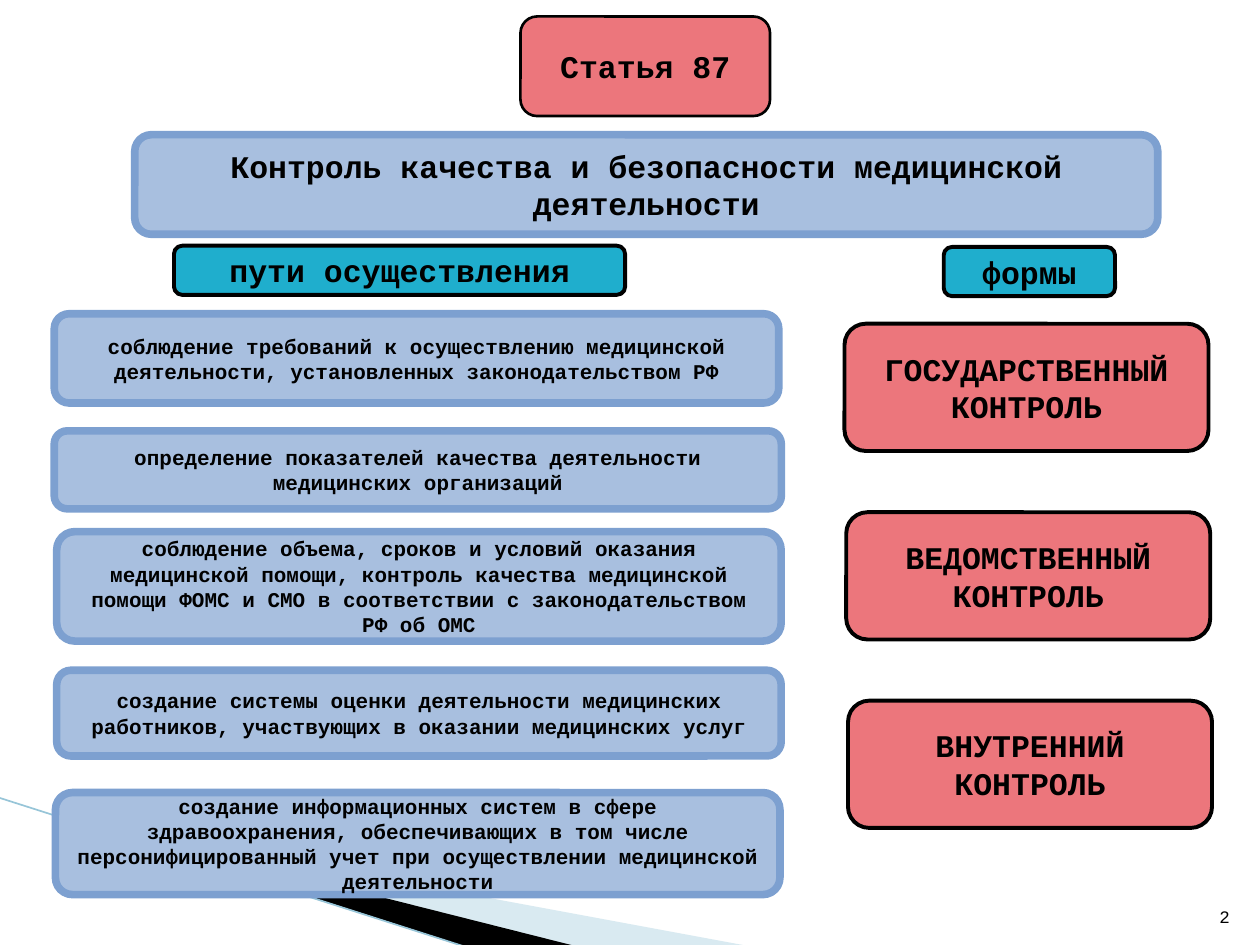
"""Build the slide on quality control in medical care."""
from dataclasses import dataclass
from lxml.etree import SubElement as Sub
from pptx import Presentation as Deck
from pptx.dml.color import RGBColor as Rgb
from pptx.enum.shapes import MSO_CONNECTOR as Link, MSO_SHAPE as Shape
from pptx.enum.text import MSO_ANCHOR as Anchor, PP_ALIGN as Align
from pptx.oxml.ns import qn
from pptx.util import Pt


@dataclass(frozen=True)
class Theme:
    face: str = "Courier New"
    ink: str = "000000"
    blue: str = "A8BFDF"
    edge: str = "7DA0D0"
    red: str = "EC767C"
    teal: str = "1FAECD"
    mist: str = "A0CBDC"
    ray: str = "97C5D8"
    head: int = 18
    body: int = 12
    note: int = 10


T = Theme()
CARD = {"fill": T.blue, "edge": T.edge, "line": 4.33}
FORM = {"fill": T.red, "edge": T.ink, "line": 2.25}
MARK = {"fill": T.teal, "edge": T.ink, "line": 2.25}
TITLE = {"fill": T.red, "edge": T.ink, "line": 1.5}

WAYS = [
    (31, 179.3, 414, 51, "соблюдение требований к осуществлению медицинской "
     "деятельности, установленных законодательством РФ"),
    (31, 246.2, 415.5, 44.6, "определение показателей качества деятельности "
     "медицинских организаций"),
    (32.4, 303.8, 414, 62.6, "соблюдение объема, сроков и условий оказания "
     "медицинской помощи, контроль качества медицинской помощи ФОМС и СМО "
     "в соответствии с законодательством РФ об ОМС"),
    (32.4, 383, 414, 49, "создание системы оценки деятельности медицинских "
     "работников, участвующих в оказании медицинских услуг"),
    (31.7, 452.9, 414, 58.3, "создание информационных систем в сфере "
     "здравоохранения, обеспечивающих в том числе персонифицированный учет "
     "при осуществлении медицинской деятельности"),
]
FORMS = [
    ["ГОСУДАРСТВЕННЫЙ КОНТРОЛЬ"],
    ["ВЕДОМСТВЕННЫЙ", "КОНТРОЛЬ"],
    ["ВНУТРЕННИЙ", "КОНТРОЛЬ"],
]


def tint(fill, hue):
    fill.solid()
    fill.fore_color.rgb = Rgb.from_string(hue)


def write(frame, lines, size, bold=True, align=Align.CENTER,
          anchor=Anchor.MIDDLE):
    frame.word_wrap = True
    frame.vertical_anchor = anchor
    look = {"name": T.face, "size": Pt(size), "bold": bold}
    for i, line in enumerate(lines):
        para = frame.add_paragraph() if i else frame.paragraphs[0]
        para.alignment = align
        run = para.add_run()
        run.text = line
        for key, val in look.items():
            setattr(run.font, key, val)
        run.font.color.rgb = Rgb.from_string(T.ink)


def panel(slide, spot, lines, style, size=T.head):
    box = slide.shapes.add_shape(Shape.ROUNDED_RECTANGLE, *map(Pt, spot))
    box.shadow.inherit = False
    tint(box.fill, style["fill"])
    tint(box.line.fill, style["edge"])
    box.line.width = Pt(style["line"])
    write(box.text_frame, lines, size)


def wedge(slide, points, hue, alpha=None):
    first, *rest = [(Pt(x), Pt(y)) for x, y in points]
    pen = slide.shapes.build_freeform(*first)
    pen.add_line_segments(rest, close=True)
    form = pen.convert_to_shape()
    form.shadow.inherit = False
    tint(form.fill, hue)
    form.line.fill.background()
    if alpha:
        node = form.fill._xPr.find(".//" + qn("a:srgbClr"))
        Sub(node, qn("a:alpha"), val=str(alpha * 1000))


def ray(slide, ends):
    line = slide.shapes.add_connector(Link.STRAIGHT, *map(Pt, ends))
    tint(line.line.fill, T.ray)
    line.line.width = Pt(0.95)
    Sub(line._element.spPr, qn("a:effectLst"))


def number(slide, spot, text):
    box = slide.shapes.add_textbox(*map(Pt, spot))
    write(box.text_frame, [text], T.note, False, Align.RIGHT, Anchor.BOTTOM)


def main():
    deck = Deck()
    deck.slide_width, deck.slide_height = Pt(720), Pt(540)
    slide = deck.slides.add_slide(deck.slide_layouts[6])
    wedge(slide, [(39.6, 468.7), (428.4, 540.7), (328.3, 540.7),
                  (39.6, 468)], T.mist, 40)
    wedge(slide, [(38.2, 467.3), (329, 540.7), (267.8, 541.4),
                  (38.9, 468)], T.ink)
    ray(slide, (-0.7, 455.8, 267.1, 541.4))
    panel(slide, (77, 77, 584.6, 56.9),
          ["Контроль качества и безопасности медицинской деятельности"], CARD)
    panel(slide, (297.4, 9.4, 142.6, 56.9), ["Статья 87"], TITLE)
    for i, lines in enumerate(FORMS):
        spot = (482.6 + i, 185 + 107.7 * i, 208, 72.7)
        panel(slide, spot, lines, FORM)
    panel(slide, (99.4, 140.4, 257.8, 28.1), ["пути осуществления"], MARK)
    for *spot, text in WAYS:
        panel(slide, spot, [text], CARD, T.body)
    panel(slide, (539.3, 141.1, 97.9, 28.1), ["формы"], MARK)
    number(slide, (681.1, 504.7, 28.8, 28.8), "2")
    deck.save("out.pptx")


if __name__ == "__main__":
    main()
